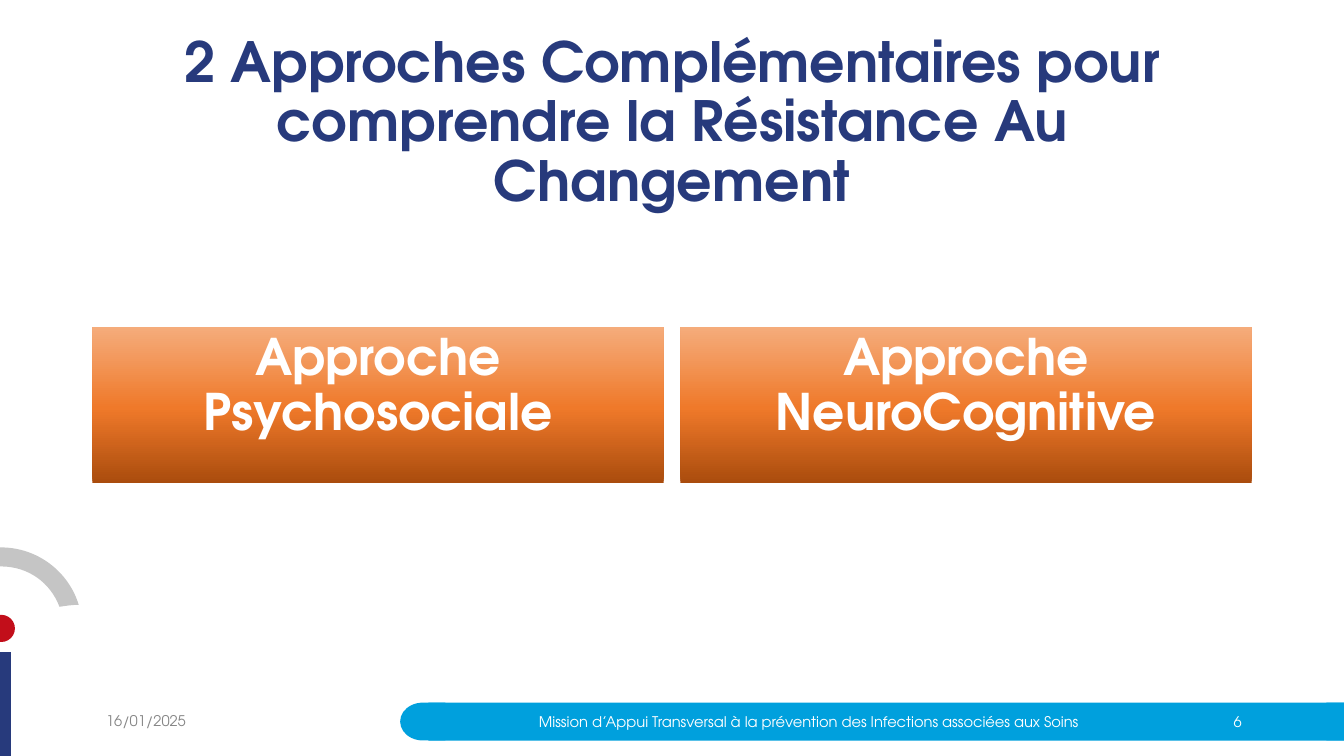
import copy
from pptx import Presentation
from pptx import util as u
from pptx.dml.color import RGBColor
from pptx.enum import shapes, text

Pt = u.Pt
FONT = "TeX Gyre Adventor"
NAVY, CYAN, WHITE = "273A7C", "00A0DD", "FFFFFF"


def rgb(value):
    return RGBColor.from_string(value)


def write(sp, content, size, color, align, anchor, bold=False):
    tf = sp.text_frame
    tf.word_wrap = True
    tf.auto_size = text.MSO_AUTO_SIZE.NONE
    tf.vertical_anchor = anchor
    p = tf.paragraphs[0]
    p.text = content
    p.alignment = align
    p.font.name = FONT
    p.font.size = Pt(size)
    p.font.bold = bold
    p.font.color.rgb = rgb(color)
    return p


prs = Presentation()
prs.slide_width, prs.slide_height = Pt(960), Pt(540)
s = prs.slides.add_slide(prs.slide_layouts[5])
LEFT, CENTER, RIGHT = text.PP_ALIGN.LEFT, text.PP_ALIGN.CENTER, text.PP_ALIGN.RIGHT
TOP, MIDDLE = text.MSO_ANCHOR.TOP, text.MSO_ANCHOR.MIDDLE

arc_segments = (
    ((-25.9, 391), (-49, 409.7), (-55.4, 434.2)),
    ((-45.4, 434.2),),
    ((-43.9, 434.2), (-42.5, 434.9), (-41.8, 434.9)),
    ((-35.3, 416.9), (-18.7, 404.6), (0.7, 404.6)),
    ((20.2, 404.6), (36, 416.2), (42.5, 433.4)),
    ((46.8, 432.7), (51.8, 432), (56.2, 432)),
    ((49, 408.2), (26.6, 391), (0.7, 391)),
)
builder = s.shapes.build_freeform(Pt(0.7), Pt(391))
for segment in arc_segments:
    builder.add_line_segments([(Pt(x), Pt(y)) for x, y in segment], close=False)
builder.add_line_segments([], close=True)
arc = builder.convert_to_shape()
lines = iter(arc._element.spPr.xpath(".//a:lnTo"))
for segment in arc_segments:
    curve = next(lines)
    if len(segment) == 3:
        curve.tag = curve.tag.replace("lnTo", "cubicBezTo")
        for extra in (next(lines), next(lines)):
            curve.append(extra[0])
            extra.getparent().remove(extra)
arc.fill.solid()
arc.fill.fore_color.rgb = rgb("C5C5C5")
arc.line.fill.background()
arc.shadow.inherit = False

kinds = shapes.MSO_SHAPE
for kind, left, top, width, height, color, rotation in (
    (kinds.RECTANGLE, -6.5, 465.8, 14.4, 74.9, NAVY, 0),
    (kinds.OVAL, -8.7, 439.2, 19.4, 19.4, "C20E1A", 0),
    (kinds.RECTANGLE, 306, 501.9, 654.5, 27.2, CYAN, 0),
    (kinds.FLOWCHART_DELAY, 947.5, 501.9, 32.4, 27, CYAN, 0),
    (kinds.FLOWCHART_DELAY, 285.8, 501.9, 32.4, 27, CYAN, 180),
):
    sp = s.shapes.add_shape(kind, Pt(left), Pt(top), Pt(width), Pt(height))
    sp.rotation = rotation
    sp.fill.solid()
    sp.fill.fore_color.rgb = rgb(color)
    sp.line.fill.background()
    sp.shadow.inherit = False

title = s.shapes.title
title.left, title.top, title.width, title.height = Pt(66), Pt(28.8), Pt(828), Pt(119.5)
p = write(title, "2 Approches Complémentaires pour comprendre la Résistance Au Changement",
          39.6, NAVY, CENTER, MIDDLE, True)
p.line_spacing = 0.9

for i, label in enumerate(("Approche Psychosociale", "Approche NeuroCognitive")):
    card = s.shapes.add_shape(kinds.RECTANGLE, Pt(66 + 420 * i), Pt(233.7), Pt(408), Pt(111.4))
    card.line.fill.background()
    card.shadow.inherit = False
    card.fill.gradient()
    card.fill.gradient_angle = 90
    first_stop = card._element.spPr.xpath(".//a:gs")[0]
    first_stop.addnext(copy.deepcopy(first_stop))
    stops = ((0, "AA4C0D"), (0.48, "EF792A"), (1, "F5AC7B"))
    for stop, (position, color) in zip(card.fill.gradient_stops, stops):
        stop.position = position
        stop.color.rgb = rgb(color)
    p = write(card, label, 36, WHITE, CENTER, TOP, True)
    p.line_spacing = 0.9

for content, left, top, width, color, align in (
    ("16/01/2025", 68.7, 500.4, 216, "868686", LEFT),
    ("Mission d’Appui Transversal à la prévention des Infections associées aux Soins",
     318, 501.1, 519.8, WHITE, CENTER),
    ("6", 851.6, 501.1, 42.5, WHITE, RIGHT),
):
    box = s.shapes.add_textbox(Pt(left), Pt(top), Pt(width), Pt(28.8))
    write(box, content, 10.5, color, align, MIDDLE)

prs.save("out.pptx")
